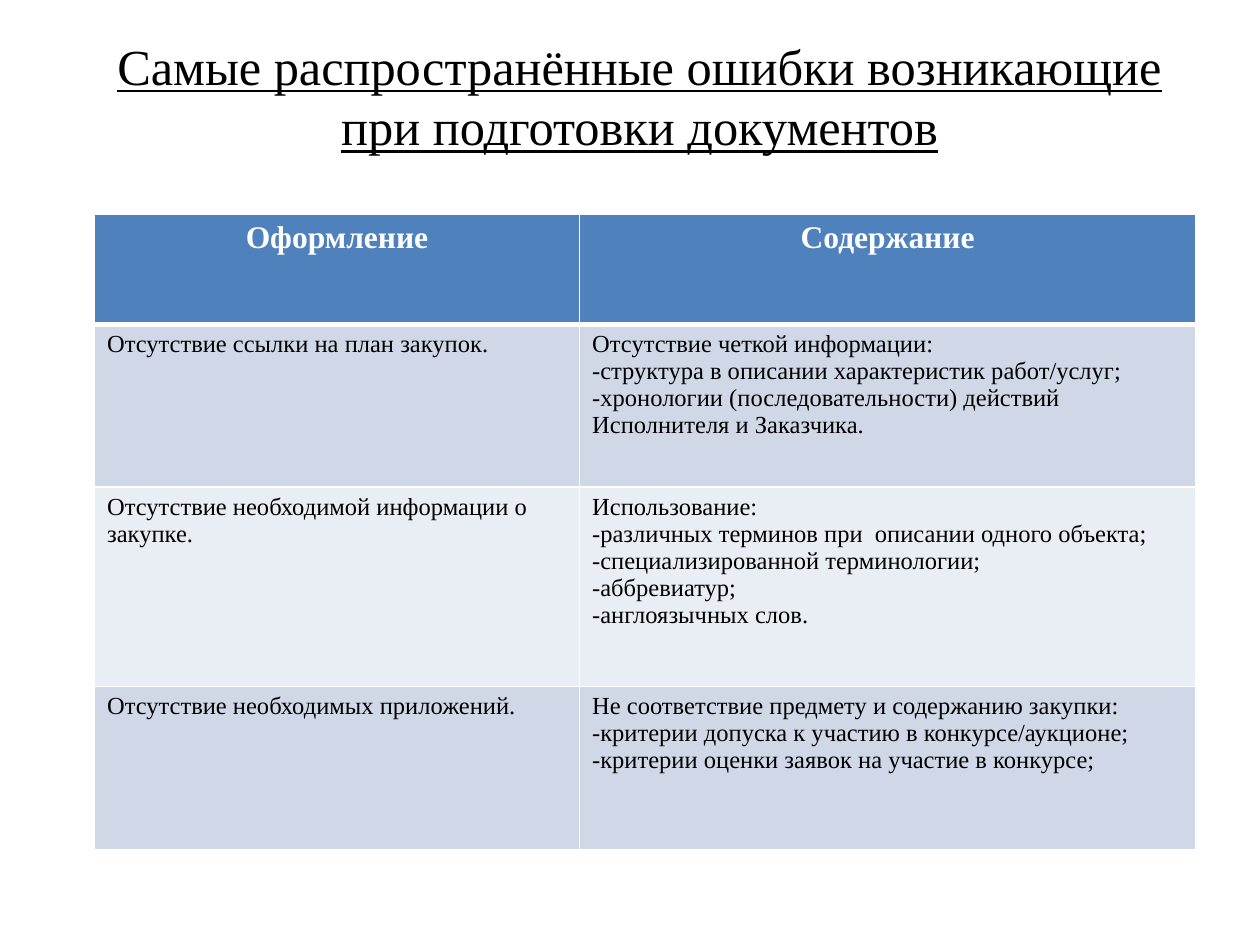
from lxml.etree import SubElement
from pptx import Presentation
from pptx.dml.color import RGBColor
from pptx.enum.text import MSO_ANCHOR, PP_ALIGN
from pptx.oxml.ns import qn
from pptx.util import Pt

COLUMN_WIDTHS = [277.2, 352.1]
ROW_HEIGHTS = [62.9, 93, 113.9, 93.2]
HEADINGS = ["Оформление", "Содержание"]
MISTAKES = [
    ("Отсутствие ссылки на план закупок.", PP_ALIGN.LEFT,
     ["Отсутствие четкой информации:",
      "структура в описании характеристик работ/услуг;",
      "хронологии (последовательности) действий Исполнителя и Заказчика."]),
    ("Отсутствие необходимой информации о закупке.", PP_ALIGN.JUSTIFY,
     ["Использование:",
      "различных терминов при  описании одного объекта;",
      "специализированной терминологии;",
      "аббревиатур;",
      "англоязычных слов."]),
    ("Отсутствие необходимых приложений.", PP_ALIGN.LEFT,
     ["Не соответствие предмету и содержанию закупки:",
      "критерии допуска к участию в конкурсе/аукционе;",
      "критерии оценки заявок на участие в конкурсе;"]),
]


def color(value):
    return RGBColor.from_string(value)


class SlideBuilder:
    """Holds the style and the current slide, and adds elements to it."""

    font_name = "Times New Roman"
    ink = "000000"
    header_ink = "FFFFFF"
    header_fill = "4F81BD"
    border = "FFFFFF"
    band_fills = ["D0D8E8", "E9EDF4"]

    def __init__(self, page):
        self.page = page

    def style(self, para, size, ink, align, bold=False, underline=False):
        para.alignment = align
        font = para.font
        font.name, font.size = self.font_name, Pt(size)
        font.bold, font.underline = bold, underline
        font.color.rgb = color(ink)

    def dash(self, para, size):
        properties = para._p.get_or_add_pPr()
        properties.set("marL", "0")
        properties.set("indent", "0")
        bullet_font = SubElement(properties, qn("a:buFont"), typeface=self.font_name)
        bullet = SubElement(properties, qn("a:buChar"), char="-")
        defaults = properties.find(qn("a:defRPr"))
        defaults.addprevious(bullet_font)
        defaults.addprevious(bullet)
        for span in para.runs:
            span.font.name, span.font.size = self.font_name, Pt(size)

    def borders(self, cell, top, bottom):
        properties = cell._tc.get_or_add_tcPr()
        sides = {"a:lnL": 1, "a:lnR": 1, "a:lnT": top, "a:lnB": bottom}
        for index, (side, weight) in enumerate(sides.items()):
            line = SubElement(properties, qn(side), w=str(Pt(weight)))
            fill = SubElement(line, qn("a:solidFill"))
            SubElement(fill, qn("a:srgbClr"), val=self.border)
            properties.insert(index, line)

    def title(self, text, left, top, width, height):
        box = self.page.shapes.add_textbox(Pt(left), Pt(top), Pt(width), Pt(height))
        frame = box.text_frame
        frame.word_wrap = True
        frame.margin_left = frame.margin_right = 0
        frame.vertical_anchor = MSO_ANCHOR.MIDDLE
        frame.text = text
        self.style(frame.paragraphs[0], 28.8, self.ink, PP_ALIGN.CENTER, underline=True)

    def cell(self, cell, lines, fill, size, ink, align, bold=False):
        cell.fill.solid()
        cell.fill.fore_color.rgb = color(fill)
        cell.text_frame.text = "\n".join(lines)
        for index, para in enumerate(cell.text_frame.paragraphs):
            self.style(para, size, ink, align, bold)
            if index:
                self.dash(para, size)

    def table(self, left, top, widths, heights, headings, rows):
        table = self.page.shapes.add_table(
            len(heights), len(widths), Pt(left), Pt(top),
            Pt(sum(widths)), Pt(sum(heights))).table
        for column, width in zip(table.columns, widths):
            column.width = Pt(width)
        for row, height in zip(table.rows, heights):
            row.height = Pt(height)
        for index, heading in enumerate(headings):
            self.cell(table.cell(0, index), [heading], self.header_fill, 18,
                      self.header_ink, PP_ALIGN.CENTER, bold=True)
            self.borders(table.cell(0, index), 1, 3)
            self.borders(table.cell(1, index), 3, 1)
        for index, (form, align, content) in enumerate(rows):
            fill = self.band_fills[index % 2]
            self.cell(table.cell(index + 1, 0), [form], fill, 14, self.ink, PP_ALIGN.LEFT)
            self.cell(table.cell(index + 1, 1), content, fill, 14, self.ink, align)


def main():
    deck = Presentation()
    deck.slide_width, deck.slide_height = Pt(720), Pt(540)
    builder = SlideBuilder(deck.slides.add_slide(deck.slide_layouts[6]))
    builder.title("Самые распространённые ошибки возникающие при подготовки документов",
                  59.6, 20.5, 612, 68)
    builder.table(54, 122.4, COLUMN_WIDTHS, ROW_HEIGHTS, HEADINGS, MISTAKES)
    deck.save("out.pptx")


if __name__ == "__main__":
    main()
